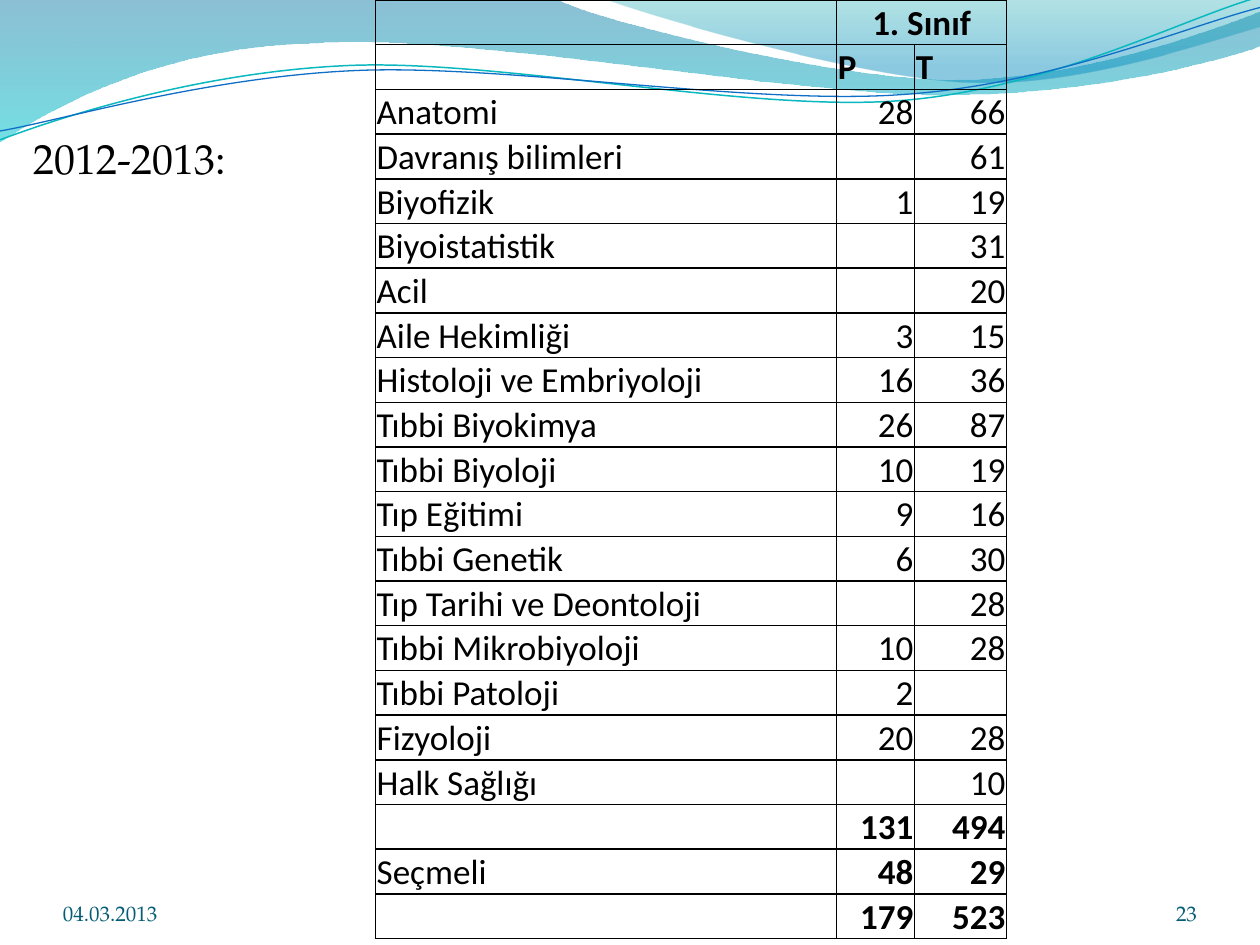
import math
from dataclasses import dataclass

from lxml import etree
from pptx import Presentation
from pptx import util as u
from pptx.dml.color import RGBColor
from pptx.enum import text
from pptx.oxml import ns


@dataclass(frozen=True)
class Theme:
    heading_font: str = "TeX Gyre Pagella"
    table_font: str = "Calibri"
    ink: str = "000000"
    footer: str = "045D75"
    teal_line: str = "0AB8BF"
    blue_line: str = "0F6FC6"
    wide_wave: tuple = ((0, "0074A1", 45), (1, "00C6CF", 55))
    right_wave: tuple = ((0, "00A1A9", 30), (0.8, "008BBF", 45))
    heading_size: int = 24
    table_size: int = 20
    footer_size: int = 12


THEME = Theme()
LEFT, CENTER, RIGHT = text.PP_ALIGN.LEFT, text.PP_ALIGN.CENTER, text.PP_ALIGN.RIGHT
BOTTOM = text.MSO_ANCHOR.BOTTOM
RIBBON_TILT = -2.7

WIDE_WAVE = [(0, 0), (4.4, -0.01), (4.76, 0.17, 6.64, 0.63, 7.58, 0.63),
             (8.53, 0.63, 9.58, 0.26, 10, 0.09), (10.01, 0.36),
             (9.83, 0.44, 8.7, 0.76, 7.46, 0.75), (6.22, 0.75, 3.82, 0.28, 2.57, 0.34),
             (1.29, 0.36, 0.46, 0.83, -0.01, 1.13), (0, 0)]
RIGHT_WAVE = [(4.79, -0.01), (5.09, 0.11, 6.82, 0.62, 7.69, 0.65),
              (8.56, 0.69, 9.61, 0.32, 10, 0.21), (10, 0), (4.79, -0.01)]
TEAL_RIBBON = [(0, 1.11), (0.48, 0.93, 1.58, 0.57, 2.77, 0.52),
               (3.95, 0.47, 5.93, 0.89, 7.13, 0.8), (8.33, 0.71, 9.38, 0.15, 9.98, -0.02)]
BLUE_RIBBON = [(0, 1.04), (0.47, 0.96, 1.64, 0.61, 2.83, 0.56),
               (4.03, 0.51, 5.97, 0.84, 7.17, 0.75), (8.36, 0.67, 9.41, 0.21, 10, 0.06)]

COLUMN_WIDTHS = (3.66, 0.62, 0.73)
TABLE_HEIGHT = 7.45
HEADER_ROWS = 2
COURSE_HOURS = [
    ("", "1. Sınıf", ""),
    ("", "P", "T"),
    ("Anatomi", "28", "66"),
    ("Davranış bilimleri", "", "61"),
    ("Biyofizik", "1", "19"),
    ("Biyoistatistik", "", "31"),
    ("Acil", "", "20"),
    ("Aile Hekimliği", "3", "15"),
    ("Histoloji ve Embriyoloji", "16", "36"),
    ("Tıbbi Biyokimya", "26", "87"),
    ("Tıbbi Biyoloji", "10", "19"),
    ("Tıp Eğitimi", "9", "16"),
    ("Tıbbi Genetik", "6", "30"),
    ("Tıp Tarihi ve Deontoloji", "", "28"),
    ("Tıbbi Mikrobiyoloji", "10", "28"),
    ("Tıbbi Patoloji", "2", ""),
    ("Fizyoloji", "20", "28"),
    ("Halk Sağlığı", "", "10"),
    ("", "131", "494"),
    ("Seçmeli", "48", "29"),
    ("", "179", "523"),
]
FIRST_TOTAL_ROW = len(COURSE_HOURS) - 3


def set_all(target, values):
    for name, value in values.items():
        setattr(target, name, value)


def turn(segments, degrees, center):
    cos, sin = math.cos(math.radians(degrees)), math.sin(math.radians(degrees))
    cx, cy = center
    turned = []
    for segment in segments:
        pairs = zip(segment[::2], segment[1::2])
        turned.append(tuple(value for x, y in pairs for value in (
            cx + (x - cx) * cos - (y - cy) * sin,
            cy + (x - cx) * sin + (y - cy) * cos)))
    return turned


def add_outline(slide, segments, close):
    start, *ends = [tuple(map(u.Inches, segment[-2:])) for segment in segments]
    builder = slide.shapes.build_freeform(*start)
    builder.add_line_segments(ends, close=close)
    outline = builder.convert_to_shape()
    outline.shadow.inherit = False
    straight = list(outline._element.spPr.iter(ns.qn("a:lnTo")))
    for line, segment in zip(straight, segments[1:]):
        if len(segment) == 6:
            line.tag = ns.qn("a:cubicBezTo")
            line.remove(line[0])
            for x, y in zip(segment[::2], segment[1::2]):
                etree.SubElement(line, ns.qn("a:pt"), x=str(u.Inches(x) - outline.left),
                                 y=str(u.Inches(y) - outline.top))
    return outline


def add_wave(slide, segments, stops):
    wave = add_outline(slide, segments, close=True)
    wave.line.fill.background()
    wave.fill.gradient()
    wave.fill.gradient_angle = 270
    for stop, (position, color, _) in zip(wave.fill.gradient_stops, stops):
        stop.position = position
        stop.color.rgb = RGBColor.from_string(color)
    for tint, (_, _, opacity) in zip(wave._element.spPr.iter(ns.qn("a:srgbClr")), stops):
        etree.SubElement(tint, ns.qn("a:alpha"), val=str(opacity * 1000))


def add_ribbon(slide, segments, center, color, width):
    ribbon = add_outline(slide, turn(segments, -RIBBON_TILT, center), close=False)
    ribbon.rotation = RIBBON_TILT
    ribbon.fill.background()
    ribbon.line.color.rgb = RGBColor.from_string(color)
    ribbon.line.width = u.Pt(width)


def write(frame, words, align, color, **font_values):
    paragraph = frame.paragraphs[0]
    paragraph.alignment = align
    if words:
        paragraph.add_run().text = words
    for font in [paragraph.font] + [run.font for run in paragraph.runs]:
        set_all(font, font_values)
        font.color.rgb = RGBColor.from_string(color)


def add_label(slide, box, words, size, color, align=LEFT, **frame_values):
    label = slide.shapes.add_textbox(*map(u.Inches, box))
    set_all(label.text_frame, frame_values)
    write(label.text_frame, words, align, color,
          size=u.Pt(size), name=THEME.heading_font)


def add_borders(cell):
    properties = cell._tc.get_or_add_tcPr()
    for side in ("lnL", "lnR", "lnT", "lnB"):
        border = etree.SubElement(properties, ns.qn(f"a:{side}"), w=str(u.Pt(1)))
        paint = etree.SubElement(border, ns.qn("a:solidFill"))
        etree.SubElement(paint, ns.qn("a:srgbClr"), val=THEME.ink)


def add_hours_table(slide):
    row_count = len(COURSE_HOURS)
    hours = slide.shapes.add_table(
        row_count, len(COLUMN_WIDTHS), u.Inches(2.98), 0,
        u.Inches(sum(COLUMN_WIDTHS)), u.Inches(TABLE_HEIGHT)).table
    set_all(hours, {"first_row": False, "horz_banding": False})
    for column, width in zip(hours.columns, COLUMN_WIDTHS):
        column.width = u.Inches(width)
    for row in hours.rows:
        row.height = u.Inches(TABLE_HEIGHT / row_count)
    hours.cell(0, 1).merge(hours.cell(0, 2))
    margin = u.Inches(0.01)
    for r, entries in enumerate(COURSE_HOURS):
        for c, words in enumerate(entries):
            cell = hours.cell(r, c)
            add_borders(cell)
            cell.fill.background()
            set_all(cell, {"margin_left": margin, "margin_right": margin,
                           "margin_top": margin, "margin_bottom": 0,
                           "vertical_anchor": BOTTOM})
            align = CENTER if r == 0 else RIGHT if c and r >= HEADER_ROWS else LEFT
            bold = r < HEADER_ROWS or (c > 0 and r >= FIRST_TOTAL_ROW)
            write(cell.text_frame, words, align, THEME.ink, bold=bold,
                  size=u.Pt(THEME.table_size), name=THEME.table_font)


def main():
    deck = Presentation()
    set_all(deck, {"slide_width": u.Inches(10), "slide_height": u.Inches(7.5)})
    slide = deck.slides.add_slide(deck.slide_layouts[6])
    add_wave(slide, WIDE_WAVE, THEME.wide_wave)
    add_wave(slide, RIGHT_WAVE, THEME.right_wave)
    add_ribbon(slide, TEAL_RIBBON, (4.99, 0.58), THEME.teal_line, 0.85)
    add_ribbon(slide, BLUE_RIBBON, (5, 0.59), THEME.blue_line, 0.75)
    add_hours_table(slide)
    add_label(slide, (0.17, 1, 1.76, 0.5), "2012-2013:", THEME.heading_size, THEME.ink,
              word_wrap=False, auto_size=text.MSO_AUTO_SIZE.SHAPE_TO_FIT_TEXT)
    footer = {"word_wrap": True, "vertical_anchor": BOTTOM, "margin_left": 0,
              "margin_right": 0, "margin_top": 0, "margin_bottom": 0}
    add_label(slide, (8.67, 6.95, 0.83, 0.4), "23", THEME.footer_size, THEME.footer,
              RIGHT, **footer)
    add_label(slide, (0.5, 6.95, 2.33, 0.4), "04.03.2013", THEME.footer_size,
              THEME.footer, **footer)
    deck.save("out.pptx")


if __name__ == "__main__":
    main()
